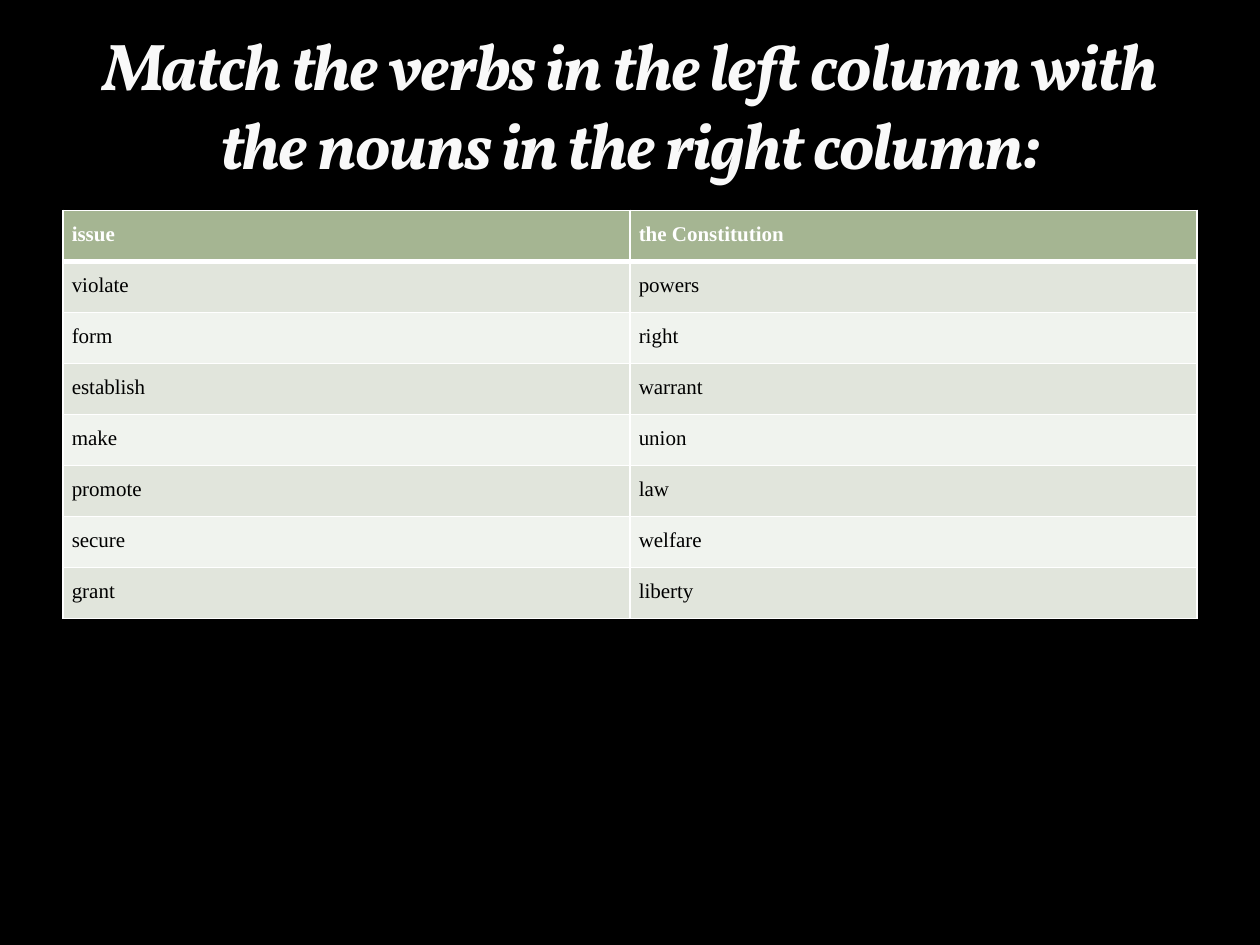
from lxml import etree
from pptx import Presentation
from pptx import util as u
from pptx.dml.color import RGBColor
from pptx.enum import text
from pptx.oxml import ns

WIDTH, HEIGHT = u.Inches(10), u.Inches(7.5)
MARGIN = 0.05
HEADING = "Match the verbs in the left column with the nouns in the right column:"
WORD_PAIRS = [
    ("issue", "the Constitution"),
    ("violate", "powers"),
    ("form", "right"),
    ("establish", "warrant"),
    ("make", "union"),
    ("promote", "law"),
    ("secure", "welfare"),
    ("grant", "liberty"),
]
HEADER_FILL, BAND_FILLS = "A5B592", ("F0F3EE", "E1E5DC")
HEADING_FONT = {"name": "Vollkorn", "size": u.Pt(37.8), "bold": True, "italic": True}
CELL_FONT = {"name": "Times New Roman", "size": u.Pt(12)}
CELL_MARGINS = {f"margin_{side}": u.Inches(0.07) for side in ("left", "right", "top", "bottom")}


def set_color(target, value):
    target.rgb = RGBColor.from_string(value)


def set_values(target, values):
    for name, value in values.items():
        setattr(target, name, value)


def place(left, top, width, height):
    return [round(share * size) for share, size in
            zip((left, top, width, height), (WIDTH, HEIGHT) * 2)]


def add_line(parent, tag, color, points, alpha=100):
    line = etree.Element(ns.qn(f"a:{tag}"), w=str(u.Pt(points)))
    fill = etree.SubElement(line, ns.qn("a:solidFill"))
    tone = etree.SubElement(fill, ns.qn("a:srgbClr"), val=color)
    if alpha < 100:
        etree.SubElement(tone, ns.qn("a:alpha"), val=str(alpha * 1000))
    parent.append(line)


def write(paragraph, words, font, color):
    run = paragraph.add_run()
    run.text = words
    set_values(run.font, font)
    properties = run._r.get_or_add_rPr()
    set_color(run.font.color, color)
    return properties


def add_heading(slide):
    box = slide.shapes.add_textbox(*place(MARGIN, 0.02, 1 - 2 * MARGIN, 0.18))
    set_values(box.text_frame, {"word_wrap": True, "vertical_anchor": text.MSO_ANCHOR.BOTTOM})
    paragraph = box.text_frame.paragraphs[0]
    paragraph.alignment = text.PP_ALIGN.CENTER
    properties = write(paragraph, HEADING, HEADING_FONT, "F9F9F9")
    properties.set("spc", "-100")
    add_line(properties, "ln", "3C4422", 0.25, 25)
    properties.insert(0, properties[-1])


def fill_cell(cell, words, row, column):
    header = row == 0
    set_values(cell, CELL_MARGINS)
    for tag in ("lnL", "lnR", "lnT", "lnB"):
        heavy = (header and tag == "lnB") or (row == 1 and tag == "lnT")
        add_line(cell._tc.get_or_add_tcPr(), tag, "FFFFFF", 3 if heavy else 1)
    cell.fill.solid()
    set_color(cell.fill.fore_color, HEADER_FILL if header else BAND_FILLS[row % 2])
    paragraph = cell.text_frame.paragraphs[0]
    set_values(paragraph, {"line_spacing": 1.15, "space_after": u.Pt(8 * column)})
    indent = u.Inches(0.38)
    set_values_xml = {"marL": indent, "indent": -indent}
    for name, value in set_values_xml.items():
        paragraph._p.get_or_add_pPr().set(name, str(value))
    write(paragraph, words, CELL_FONT | {"bold": header}, "FFFFFF" if header else "000000")


def add_word_table(slide):
    area = place(MARGIN, 1.67 / 7.5, 1 - 2 * MARGIN, 3.24 / 7.5)
    table = slide.shapes.add_table(len(WORD_PAIRS), 2, *area).table
    for row, pair in enumerate(WORD_PAIRS):
        for column, words in enumerate(pair):
            fill_cell(table.cell(row, column), words, row, column)


def main():
    presentation = Presentation()
    set_values(presentation, {"slide_width": WIDTH, "slide_height": HEIGHT})
    slide = presentation.slides.add_slide(presentation.slide_layouts[6])
    slide.background.fill.solid()
    set_color(slide.background.fill.fore_color, "000000")
    add_word_table(slide)
    add_heading(slide)
    presentation.save("out.pptx")


if __name__ == "__main__":
    main()
